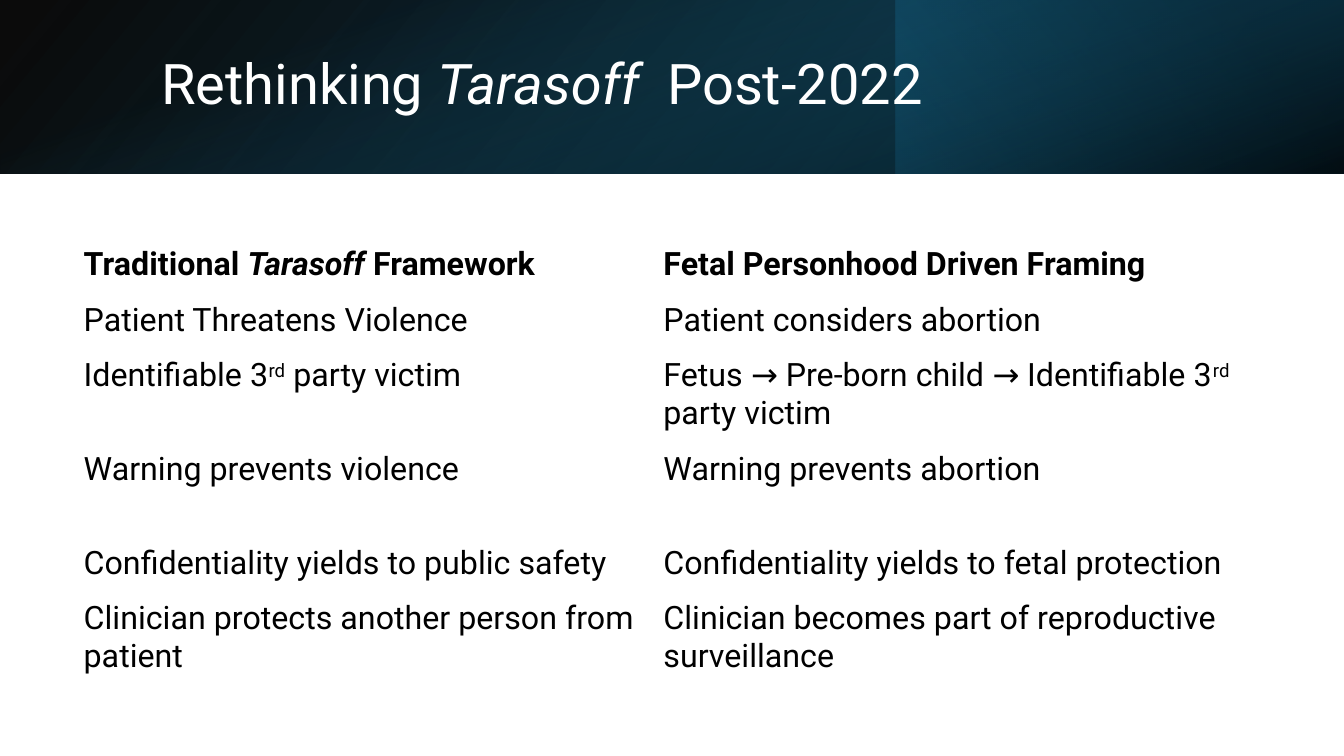
from pptx import Presentation
from pptx.dml.color import RGBColor
from pptx.enum import shapes, text
from pptx.oxml import parse_xml
from pptx.oxml.ns import nsdecls
from pptx.util import Inches, Pt

W, H, BAND = 13.33, 7.5, 1.72
FONT = "Roboto"
HEX = {"black": "000000", "white": "FFFFFF", "teal": "104862",
       "deep": "0B3041", "blue": "156082"}

# Each run is (words, style): "i" italic, "s" superscript, "" plain
TITLE = [("Rethinking ", ""), ("Tarasoff ", "i"), (" Post-2022", "")]
ROWS = [
    ([("Traditional ", ""), ("Tarasoff ", "i"), ("Framework", "")],
     [("Fetal Personhood Driven Framing", "")]),
    ([("Patient Threatens Violence", "")],
     [("Patient considers abortion", "")]),
    ([("Identifiable 3", ""), ("rd", "s"), (" party victim", "")],
     [("Fetus → Pre-born child → Identifiable 3", ""), ("rd", "s"),
      (" party victim", "")]),
    ([("Warning prevents violence", "")],
     [("Warning prevents abortion", "")]),
    ([("Confidentiality yields to public safety", "")],
     [("Confidentiality yields to fetal protection", "")]),
    ([("Clinician protects another person from patient", "")],
     [("Clinician becomes part of reproductive surveillance", "")]),
]
COLS = (5.75, 6.2)
ONE, TWO = 0.55, 0.93
TALL = {2, 3, 5}

# Box, turn, mirrored, angle, stops of (place, colour, opacity)
LAYERS = [
    ((0, 0, W, BAND), 0, True, 140,
     [(0, "black", 96), (100, "teal", 100)]),
    ((W * 2 / 3, 0, W / 3, BAND), 180, False, 320,
     [(19, "deep", 68), (100, "blue", 79)]),
    (((W - BAND) / 2, (BAND - W) / 2, BAND, W), 90, False, 340,
     [(23, "blue", 0), (99, "black", 74)]),
]


def shade(slide, box, turn, flip, angle, stops):
    """Add one see-through gradient layer of the header band."""
    rect = slide.shapes.add_shape(shapes.MSO_SHAPE.RECTANGLE,
                                  *map(Inches, box))
    rect.shadow.inherit = False
    rect.line.fill.background()
    rect.rotation = turn
    rect.fill.background()
    props = rect._element.spPr
    if flip:
        props.xfrm.set("flipH", "1")
    marks = "".join(
        f'<a:gs pos="{pos * 1000}"><a:srgbClr val="{HEX[name]}">'
        f'<a:alpha val="{alpha * 1000}"/></a:srgbClr></a:gs>'
        for pos, name, alpha in stops)
    grad = parse_xml(
        f'<a:gradFill {nsdecls("a")} rotWithShape="1"><a:gsLst>{marks}'
        f'</a:gsLst><a:lin ang="{angle * 60000}" scaled="0"/></a:gradFill>')
    props.replace(props.find(".//{*}noFill"), grad)


def write(para, runs, size, color, bold=False):
    for words, style in runs:
        run = para.add_run()
        run.text = words
        font = run.font
        font.name, font.size, font.bold = FONT, Pt(size), bold
        font.italic = style == "i"
        font.color.rgb = RGBColor.from_string(HEX[color])
        if style == "s":
            font._element.set("baseline", "30000")


def head(slide):
    title = slide.shapes.title
    title.left, title.top, title.width, title.height = map(
        Inches, (1.5, 0.38, 10.98, 0.96))
    frame = title.text_frame
    frame.word_wrap = True
    frame.vertical_anchor = text.MSO_ANCHOR.MIDDLE
    para = frame.paragraphs[0]
    para.alignment = text.PP_ALIGN.LEFT
    para.line_spacing = 0.9
    write(para, TITLE, 40, "white")


def grid(slide):
    highs = [TWO if r in TALL else ONE for r in range(len(ROWS))]
    table = slide.shapes.add_table(
        len(ROWS), len(COLS), Inches(0.7), Inches(2.38),
        Inches(sum(COLS)), Inches(sum(highs))).table
    table.first_row = table.horz_banding = False
    for col, wide in zip(table.columns, COLS):
        col.width = Inches(wide)
    for r, (row, high) in enumerate(zip(table.rows, highs)):
        row.height = Inches(high)
        for cell, runs in zip(row.cells, ROWS[r]):
            cell.fill.background()
            cell.margin_left = cell.margin_right = Inches(0.13)
            cell.margin_top = cell.margin_bottom = Inches(0.06)
            write(cell.text_frame.paragraphs[0], runs, 23, "black", r == 0)


def main():
    deck = Presentation()
    deck.slide_width, deck.slide_height = Inches(W), Inches(H)
    slide = deck.slides.add_slide(deck.slide_layouts[5])
    for layer in LAYERS:
        shade(slide, *layer)
    # Bring the title in front of the band
    slide.shapes._spTree.append(slide.shapes.title._element)
    head(slide)
    grid(slide)
    deck.save("out.pptx")


if __name__ == "__main__":
    main()
